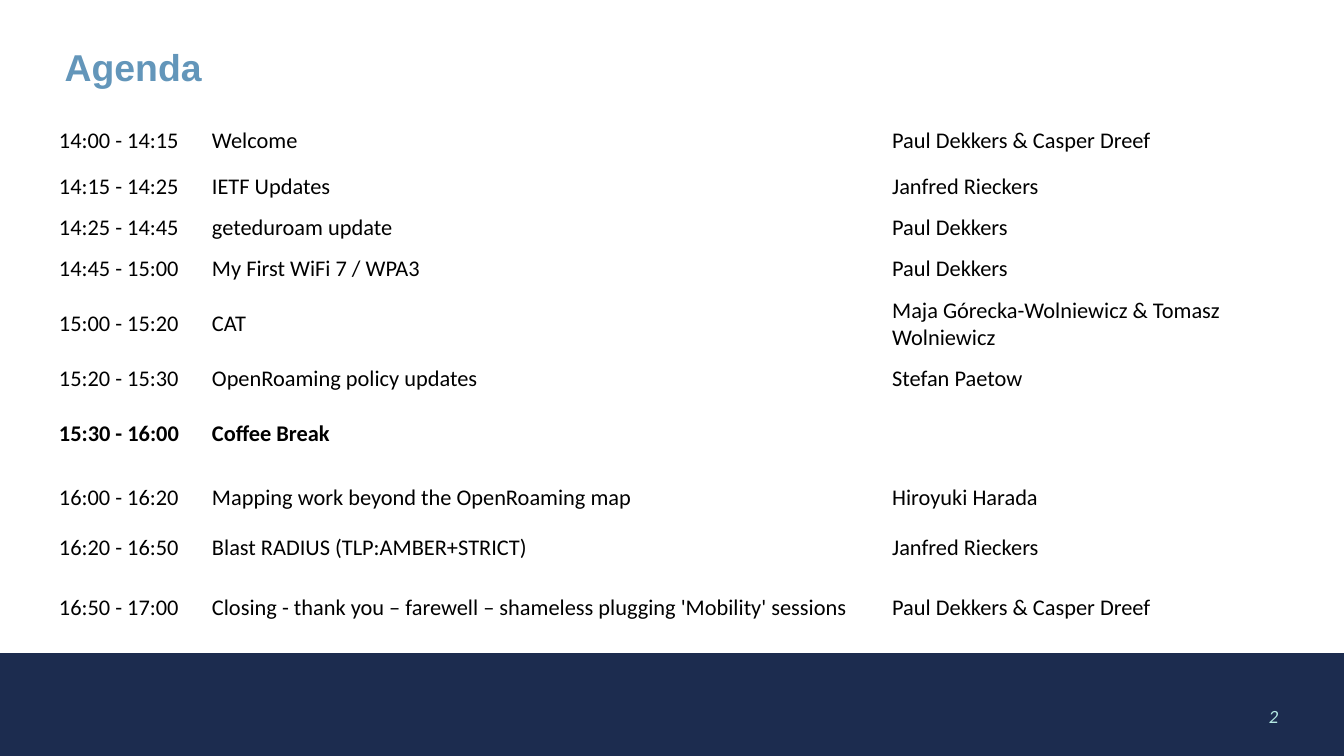
from pptx import Presentation
from pptx.dml.color import RGBColor
from pptx.enum.shapes import MSO_SHAPE
from pptx.enum.text import MSO_ANCHOR, PP_ALIGN
from pptx.util import Pt

RECTANGLE = MSO_SHAPE.RECTANGLE
MIDDLE = MSO_ANCHOR.MIDDLE
LEFT, RIGHT = PP_ALIGN.LEFT, PP_ALIGN.RIGHT

COLORS = {"navy": "1C2C4F", "blue": "6396BA", "mint": "B4E9E2", "black": "000000"}
TITLE_FONT, BODY_FONT = "Arial", "Calibri"
TITLE_ONLY = 5
BREAK = "Coffee Break"

COLUMN_WIDTHS = [82, 364.4, 212.4]
AGENDA = [
    (24.5, "14:00 - 14:15", "Welcome", "Paul Dekkers & Casper Dreef"),
    (24.5, "14:15 - 14:25", "IETF Updates", "Janfred Rieckers"),
    (19.5, "14:25 - 14:45", "geteduroam update", "Paul Dekkers"),
    (24.5, "14:45 - 15:00", "My First WiFi 7 / WPA3", "Paul Dekkers"),
    (34.5, "15:00 - 15:20", "CAT", "Maja Górecka-Wolniewicz & Tomasz Wolniewicz"),
    (24.5, "15:20 - 15:30", "OpenRoaming policy updates", "Stefan Paetow"),
    (34, "15:30 - 16:00", BREAK, ""),
    (34.5, "16:00 - 16:20", "Mapping work beyond the OpenRoaming map", "Hiroyuki Harada"),
    (19.5, "16:20 - 16:50", "Blast RADIUS (TLP:AMBER+STRICT)", "Janfred Rieckers"),
    (44.5, "16:50 - 17:00",
     "Closing - thank you – farewell – shameless plugging 'Mobility' sessions",
     "Paul Dekkers & Casper Dreef"),
]


class AgendaPage:
    def __init__(self, deck):
        self.page = deck.slides.add_slide(deck.slide_layouts[TITLE_ONLY])

    def style(self, para, size, color, font=BODY_FONT, bold=False, italic=False, align=LEFT):
        para.alignment = align
        for target in [para, *para.runs]:
            target.font.name = font
            target.font.size = Pt(size)
            target.font.bold = bold
            target.font.italic = italic
            target.font.color.rgb = RGBColor.from_string(COLORS[color])

    def title(self, text, left, top, width, height):
        box = self.page.shapes.title
        box.left, box.top, box.width, box.height = map(Pt, (left, top, width, height))
        frame = box.text_frame
        frame.text = text
        frame.vertical_anchor = MIDDLE
        para = frame.paragraphs[0]
        para.line_spacing = 0.9
        self.style(para, 20, "blue", font=TITLE_FONT, bold=True)

    def band(self, color, left, top, width, height):
        bar = self.page.shapes.add_shape(RECTANGLE, *map(Pt, (left, top, width, height)))
        bar.shadow.inherit = False
        bar.fill.solid()
        bar.fill.fore_color.rgb = RGBColor.from_string(COLORS[color])
        bar.line.fill.background()

    def page_number(self, text, left, top, width, height):
        box = self.page.shapes.add_textbox(*map(Pt, (left, top, width, height)))
        frame = box.text_frame
        frame.word_wrap = True
        frame.vertical_anchor = MIDDLE
        frame.text = text
        self.style(frame.paragraphs[0], 10, "mint", italic=True, align=RIGHT)

    def schedule(self, entries, widths, left, top):
        heights = [entry[0] for entry in entries]
        table = self.page.shapes.add_table(
            len(entries), len(widths), Pt(left), Pt(top), Pt(sum(widths)), Pt(sum(heights))
        ).table
        table.first_row = False
        table.horz_banding = False
        for column, width in zip(table.columns, widths):
            column.width = Pt(width)
        for row, (height, *texts) in zip(table.rows, entries):
            row.height = Pt(height)
            for cell, text in zip(row.cells, texts):
                self.cell(cell, text, bold=BREAK in texts)

    def cell(self, cell, text, bold):
        cell.fill.background()
        cell.vertical_anchor = MIDDLE
        cell.margin_left = cell.margin_right = Pt(4.3)
        cell.margin_top = cell.margin_bottom = Pt(2.2)
        cell.text_frame.text = text
        self.style(cell.text_frame.paragraphs[0], 12, "black", bold=bold)


def main():
    deck = Presentation()
    deck.slide_width, deck.slide_height = Pt(720), Pt(405)
    agenda = AgendaPage(deck)
    agenda.band("navy", 0, 350, 720, 55)
    agenda.schedule(AGENDA, COLUMN_WIDTHS, 27.3, 63.4)
    agenda.page_number("2", 644.4, 373, 47.5, 21.6)
    agenda.title("Agenda", 27.4, 10, 664.6, 54.7)
    deck.save("out.pptx")


if __name__ == "__main__":
    main()
